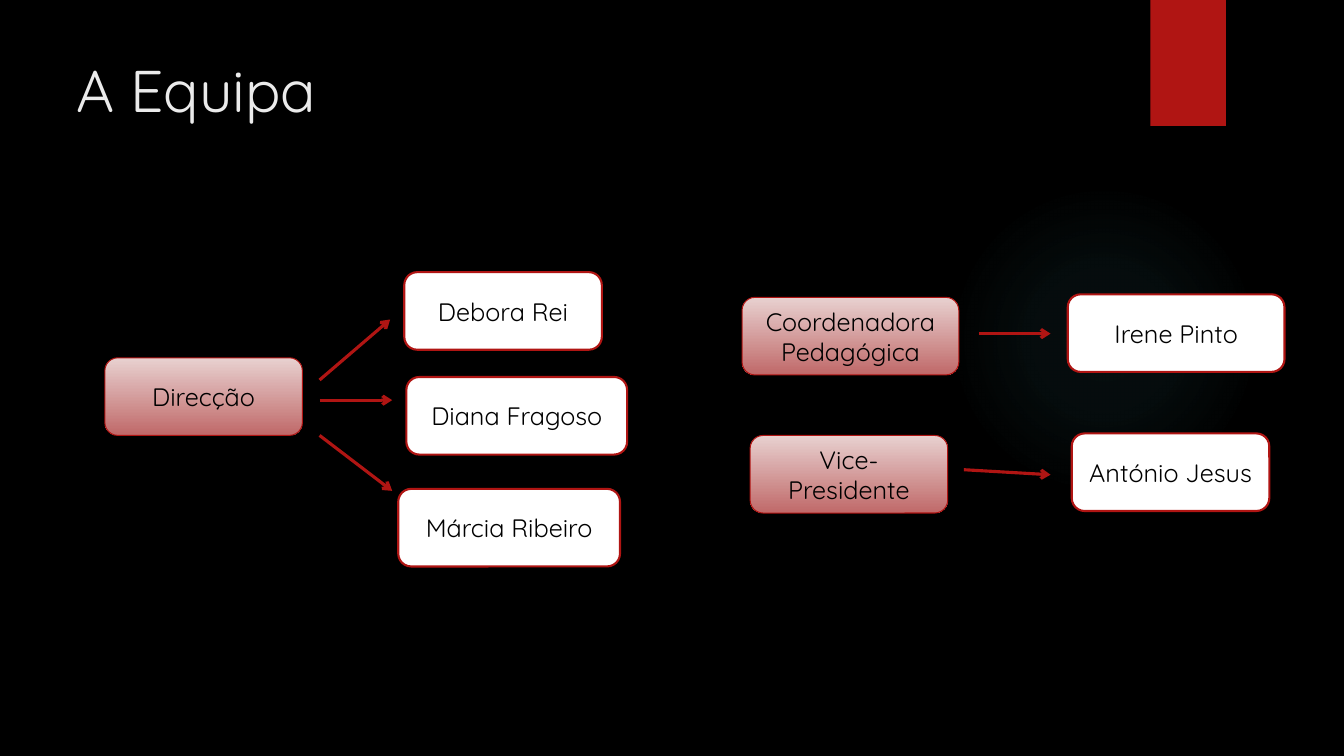
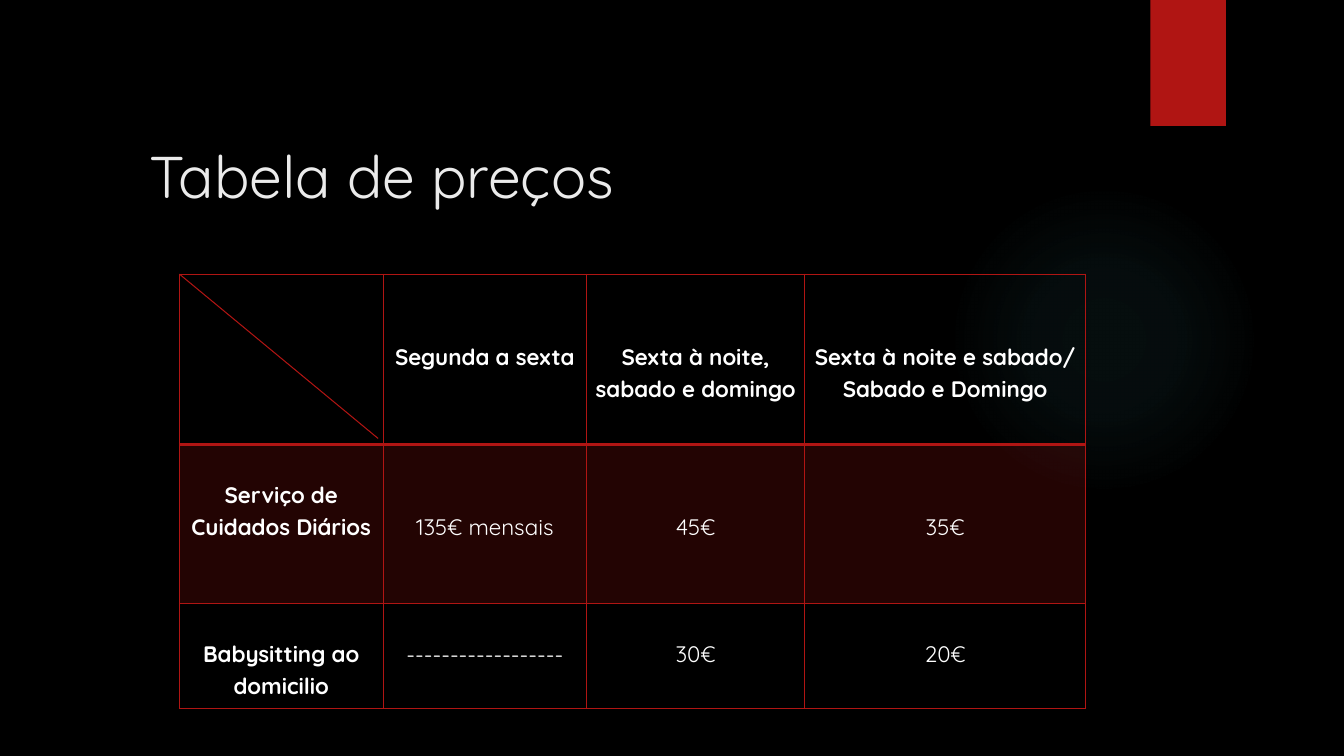
from lxml import etree
from pptx import Presentation
from pptx import util as u
from pptx.dml.color import RGBColor
from pptx.enum import shapes, text
from pptx.oxml import parse_xml
from pptx.oxml.ns import qn

RED, BLACK, WHITE, PALE = "B01513", "000000", "FFFFFF", "EBEBEB"
ROSE = ("E8D1D0", "C06969")
GLOW = "50B9C1"
FONT = "Quicksand"
NS = 'xmlns:a="http://schemas.openxmlformats.org/drawingml/2006/main"'
BOX_H = 0.77
LINE_H = 0.32  # one line of table text

# Team: text lines, left, top, width
ROLES = [
    (["Direcção"], 1.04, 3.55, 1.96),
    (["Vice-Presidente"], 7.44, 4.32, 1.96),
    (["Coordenadora", "Pedagógica"], 7.36, 2.95, 2.15),
]
NAMES = [
    (["Márcia Ribeiro"], 3.95, 4.85, 2.2),
    (["Diana Fragoso"], 4.03, 3.74, 2.19),
    (["Debora Rei"], 4.01, 2.7, 1.96),
    (["António Jesus"], 10.63, 4.3, 1.96),
    (["Irene Pinto"], 10.59, 2.92, 2.15),
]
ARROWS = [
    (3.17, 3.77, 3.87, 3.17),
    (3.17, 3.97, 3.89, 3.97),
    (3.17, 4.32, 3.89, 4.87),
    (9.56, 4.66, 10.42, 4.71),
    (9.71, 3.31, 10.42, 3.31),
]

# Prices: each cell is its text and the lines of space above it
COLS = [2.02, 2.02, 2.16, 2.79]
ROWS = [1.69, 1.58, 1.04]
PRICES = [
    [("", 0), ("Segunda a sexta", 2), ("Sexta à noite, sabado e domingo", 2),
     ("Sexta à noite e sabado/ Sabado e Domingo", 2)],
    [("Serviço de Cuidados Diários", 1), ("135€ mensais", 2), ("45€", 2), ("35€", 2)],
    [("Babysitting ao domicilio", 1), ("------------------", 1), ("30€", 1), ("20€", 1)],
]


def rgb(code):
    return RGBColor.from_string(code)


def paint(fill, code):
    fill.solid()
    fill.fore_color.rgb = rgb(code)


def write(par, words, size, code, bold=False):
    run = par.add_run()
    run.text = words
    font = run.font
    font.name, font.size, font.bold = FONT, u.Pt(size), bold
    font.color.rgb = rgb(code)


def add_form(slide, kind, *place):
    form = slide.shapes.add_shape(kind, *map(u.Inches, place))
    form.shadow.inherit = False
    form.line.fill.background()
    return form


def add_line(slide, ends, width, arrow=False):
    line = slide.shapes.add_connector(shapes.MSO_CONNECTOR.STRAIGHT, *map(u.Inches, ends))
    line.line.width = u.Pt(width)
    line.line.color.rgb = rgb(RED)
    if arrow:
        etree.SubElement(line.line._get_or_add_ln(), qn("a:tailEnd"), type="arrow")
    etree.SubElement(line._element.spPr, qn("a:effectLst"))


def add_base(deck, title, left, top):
    """Slide with the shared backdrop, ribbon and title."""
    slide = deck.slides.add_slide(deck.slide_layouts[6])
    paint(slide.background.fill, BLACK)
    # Soft round glow
    glow = add_form(slide, shapes.MSO_SHAPE.OVAL, 9.41, 1.83, 3.08, 3.08)
    stops = "".join(
        f'<a:gs pos="{pos}000"><a:srgbClr val="{GLOW}"><a:alpha val="{alpha}000"/></a:srgbClr></a:gs>'
        for pos, alpha in ((0, 7), (36, 6), (69, 0)))
    grad = parse_xml(
        f'<a:gradFill {NS}><a:gsLst>{stops}</a:gsLst><a:path path="circle">'
        '<a:fillToRect l="50000" t="50000" r="50000" b="50000"/></a:path></a:gradFill>')
    glow._element.spPr.find(qn("a:prstGeom")).addnext(grad)
    # Ribbon
    ribbon = add_form(slide, shapes.MSO_SHAPE.RECTANGLE, 11.41, 0, 0.75, 1.25)
    paint(ribbon.fill, RED)
    # Title
    box = slide.shapes.add_textbox(*map(u.Inches, (left, top, 10.29, 1.53)))
    box.text_frame.word_wrap = True
    write(box.text_frame.paragraphs[0], title, 42, PALE)
    return slide


def add_box(slide, lines, left, top, width, role):
    box = add_form(slide, shapes.MSO_SHAPE.ROUNDED_RECTANGLE, left, top, width, BOX_H)
    if role:
        box.fill.gradient()
        box.fill.gradient_angle = 270
        for stop, code in zip(box.fill.gradient_stops, ROSE):
            stop.color.rgb = rgb(code)
    else:
        paint(box.fill, WHITE)
    box.line.color.rgb = rgb(RED)
    box.line.width = u.Pt(0.75 if role else 1.5)
    frame = box.text_frame
    frame.word_wrap = True
    frame.vertical_anchor = text.MSO_ANCHOR.MIDDLE
    for i, words in enumerate(lines):
        par = frame.add_paragraph() if i else frame.paragraphs[0]
        par.alignment = text.PP_ALIGN.CENTER
        write(par, words, 18, BLACK)


def style_cell(cell, row):
    """Red borders, and a see-through red fill on the middle row."""
    props = cell._tc.get_or_add_tcPr()
    for side in "LRTB":
        heavy = (row, side) in ((0, "B"), (1, "T"))
        props.append(parse_xml(
            f'<a:ln{side} {NS} w="{u.Pt(2 if heavy else 1)}"><a:solidFill>'
            f'<a:srgbClr val="{RED}"/></a:solidFill></a:ln{side}>'))
    if row == 1:
        paint(cell.fill, RED)
        color = props.find(qn("a:solidFill"))[0]
        etree.SubElement(color, qn("a:alpha"), val="20000")
    else:
        cell.fill.background()


def add_team(deck):
    slide = add_base(deck, "A Equipa", 0.66, 0.48)
    for role, group in ((True, ROLES), (False, NAMES)):
        for item in group:
            add_box(slide, *item, role)
    for ends in ARROWS:
        add_line(slide, ends, 2.25, arrow=True)


def add_prices(deck):
    slide = add_base(deck, "Tabela de preços", 1.38, 1.34)
    left, top = 1.78, 2.72
    place = map(u.Inches, (left, top, sum(COLS), sum(ROWS)))
    table = slide.shapes.add_table(len(ROWS), len(COLS), *place).table
    table.first_row = table.horz_banding = False
    for col, width in zip(table.columns, COLS):
        col.width = u.Inches(width)
    for r, cells in enumerate(PRICES):
        table.rows[r].height = u.Inches(ROWS[r])
        for c, (words, above) in enumerate(cells):
            cell = table.cell(r, c)
            style_cell(cell, r)
            cell.margin_left = cell.margin_right = u.Inches(0.07)
            cell.margin_top = u.Inches(above * LINE_H)
            cell.margin_bottom = 0
            if words:
                par = cell.text_frame.paragraphs[0]
                par.alignment = text.PP_ALIGN.CENTER
                par.line_spacing = 1.15
                write(par, words, 16, WHITE, bold=r == 0 or c == 0)
    # Diagonal of the empty corner cell
    add_line(slide, (left, top, 3.75, 4.35), 0.75)


def main():
    deck = Presentation()
    deck.slide_width, deck.slide_height = u.Inches(13.33), u.Inches(7.5)
    add_team(deck)
    add_prices(deck)
    deck.save("out.pptx")


if __name__ == "__main__":
    main()
